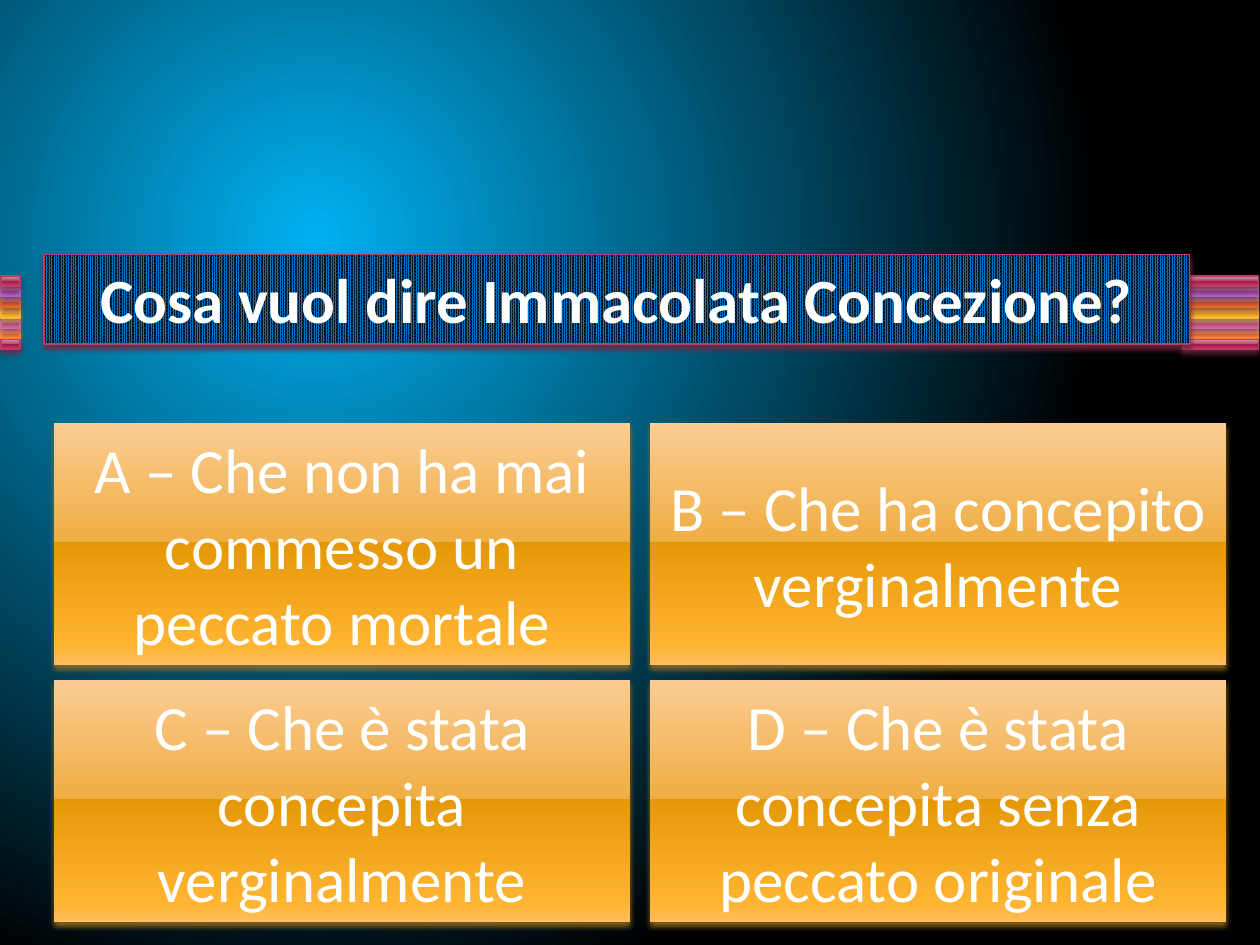
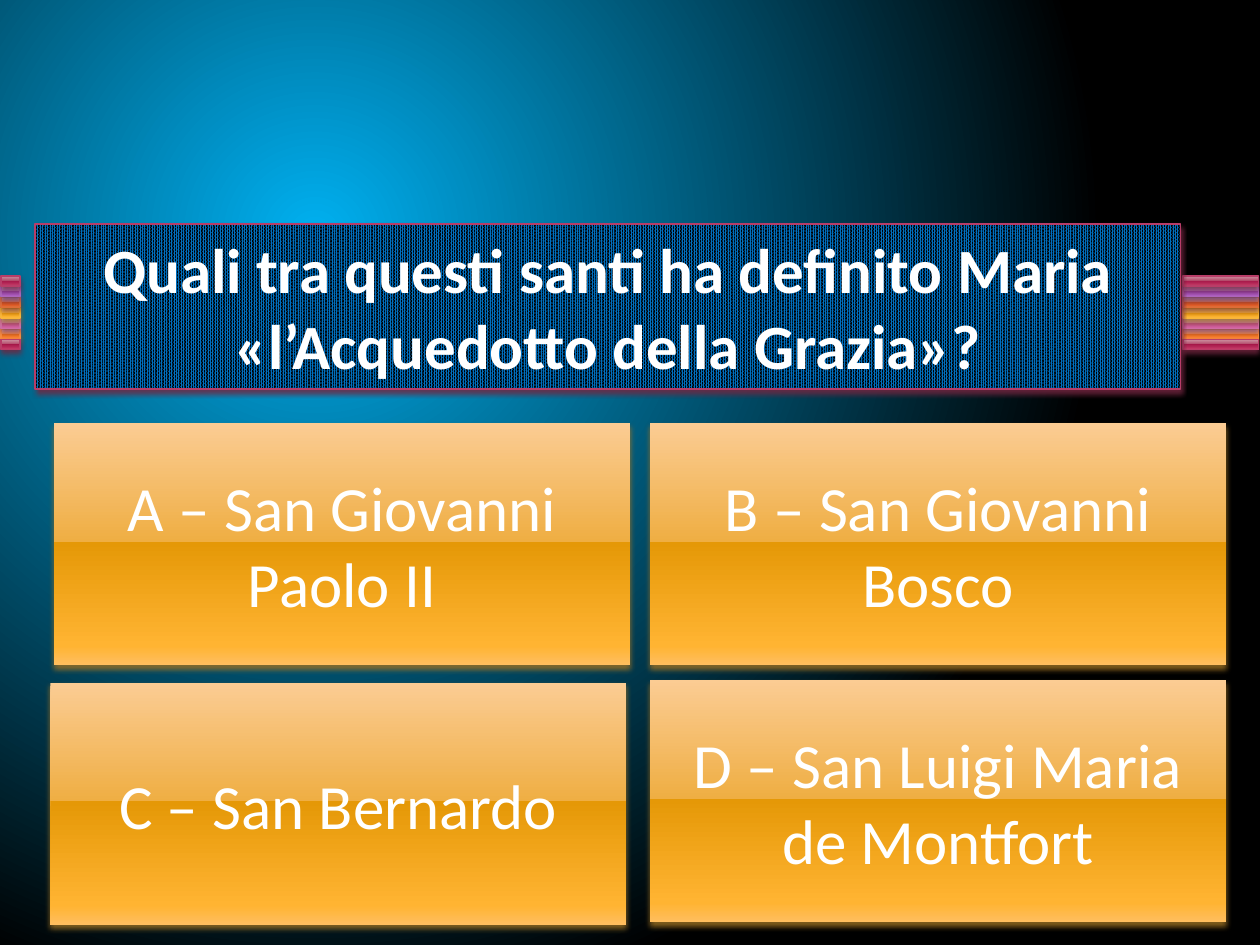
from collections import namedtuple

import pptx
import pptx.dml.color
import pptx.enum.dml
import pptx.enum.shapes
import pptx.enum.text
import pptx.oxml.ns
import pptx.util
from lxml import etree

RGB = pptx.dml.color.RGBColor.from_string
qn = pptx.oxml.ns.qn

WHITE = RGB("FFFFFF")
BLACK = RGB("000000")
SKY = RGB("00B0F0")
BLUE = RGB("0070C0")
FONT = "Calibri"
GLOSS = (0, 49, 49, 92, 100)

Tone = namedtuple("Tone", "gloss line shadow")


def tone(gloss, line, shadow):
    return Tone([RGB(c) for c in gloss.split()], RGB(line), RGB(shadow))


ORANGE = tone("FBB494 F08745 E5670B FF8736 FF9961", "FA8D3D", "9A5726")
PINK = tone("DDA4C1 C66B9D B34181 D361A0 DC79AE", "CF6DA4", "804365")
AMBER = tone("FBCC93 EFAE43 E59807 FFB432 FFBE5F", "F9B639", "9A7023")
RED = tone("E7A493 D66B42 CC4809 E9642C F07B55", "DE6C36", "894321")
PURPLE = tone("C6A2D0 A666B4 8F3EA1 AD5DBF BA76CA", "AC66BB", "6A3F73")
ROSE = tone("CE94A2 B34869 A61749 C13764 CA5D7C", "B83D68", "722640")

# Stripes overlap upwards, and the lowest one lies on top of the others.
STRIPES = ((5, ORANGE), (4, PINK), (3, AMBER), (2, RED), (1, PURPLE), (0, ROSE), (6, ROSE))

# The grid has 100 columns and 75 rows.
COLUMNS, ROWS = 100, 75
STRIPE_TOP, STRIPE_PITCH, STRIPE_HEIGHT = 21.9, 0.84, 0.8
STRIPE_SPANS = ((0.1, 1.5), (93.9, 6))
ANSWER_LEFT, ANSWER_TOP = 4.3, 33.6
ANSWER_WIDTH, ANSWER_HEIGHT = 45.7, 19.2
ANSWER_STEP_X, ANSWER_STEP_Y = 47.3, 20.4
QUESTION_WIDTH = 90.9


def add(parent, tag, **attrs):
    return etree.SubElement(parent, qn(tag), {k: str(v) for k, v in attrs.items()})


def set_stops(grad, stops):
    """Empty a gradient fill and give it (percent, colour) stops."""
    for child in list(grad):
        grad.remove(child)
    gs_list = add(grad, "a:gsLst")
    for pos, colour in stops:
        add(add(gs_list, "a:gs", pos=pos * 1000), "a:srgbClr", val=colour)


class Quiz:
    def __init__(self):
        self.prs = pptx.Presentation()
        self.prs.slide_width = pptx.util.Inches(10)
        self.prs.slide_height = pptx.util.Inches(7.5)
        self.s = None

    def new_slide(self):
        self.s = self.prs.slides.add_slide(self.prs.slide_layouts[6])
        self.background()
        for left, width in STRIPE_SPANS:
            self.stripes(left, width)

    def background(self):
        self.s.background.fill.gradient()
        grad = self.s.element.find(".//" + qn("a:gradFill"))
        set_stops(grad, [(0, SKY), (100, BLACK)])
        add(add(grad, "a:path", path="circle"), "a:fillToRect",
            l=50000, t=50000, r=100000, b=100000)

    def box(self, shapes, left, top, width, height, shadow):
        col = self.prs.slide_width / COLUMNS
        row = self.prs.slide_height / ROWS
        sp = shapes.add_shape(pptx.enum.shapes.MSO_SHAPE.RECTANGLE,
                              round(left * col), round(top * row),
                              round(width * col), round(height * row))
        sp.shadow.inherit = False
        effects = sp.element.spPr.find(qn("a:effectLst"))
        outer = add(effects, "a:outerShdw", blurRad=pptx.util.Pt(3.1),
                    dist=pptx.util.Pt(2), dir=5400000, algn="ctr", rotWithShape=0)
        add(add(outer, "a:srgbClr", val=shadow), "a:alpha", val=83000)
        return sp

    def glossy_box(self, shapes, left, top, width, height, tone):
        sp = self.box(shapes, left, top, width, height, tone.shadow)
        sp.fill.gradient()
        grad = sp.element.spPr.find(qn("a:gradFill"))
        set_stops(grad, zip(GLOSS, tone.gloss))
        add(grad, "a:lin", ang=5400000, scaled=0)
        sp.line.fill.background()
        return sp

    def outline(self, sp, colour):
        sp.line.color.rgb = colour
        sp.line.width = pptx.util.Pt(0.9)

    def stripes(self, left, width):
        group = self.s.shapes.add_group_shape()
        for row, tone in STRIPES:
            top = STRIPE_TOP + row * STRIPE_PITCH
            sp = self.glossy_box(group.shapes, left, top, width, STRIPE_HEIGHT, tone)
            self.outline(sp, tone.line)

    def text(self, sp, words, bold=False):
        p = sp.text_frame.paragraphs[0]
        p.text = words
        p.alignment = pptx.enum.text.PP_ALIGN.CENTER
        p.font.name = FONT
        p.font.size = pptx.util.Pt(36)
        p.font.bold = bold
        p.font.color.rgb = WHITE

    def answers(self, texts, nudges):
        """Fill a two by two grid; nudges maps an index to its (x, y) shift."""
        for i, words in enumerate(texts):
            row, column = divmod(i, 2)
            dx, dy = nudges.get(i, (0, 0))
            sp = self.glossy_box(self.s.shapes,
                                 ANSWER_LEFT + column * ANSWER_STEP_X + dx,
                                 ANSWER_TOP + row * ANSWER_STEP_Y + dy,
                                 ANSWER_WIDTH, ANSWER_HEIGHT, AMBER)
            self.text(sp, words)

    def question(self, words, left, top, height):
        sp = self.box(self.s.shapes, left, top, QUESTION_WIDTH, height, ROSE.shadow)
        sp.fill.patterned()
        sp.fill.pattern = pptx.enum.dml.MSO_PATTERN.PERCENT_90
        sp.fill.fore_color.rgb = BLUE
        sp.fill.back_color.rgb = BLACK
        self.outline(sp, ROSE.line)
        tf = sp.text_frame
        tf.vertical_anchor = pptx.enum.text.MSO_ANCHOR.TOP
        tf.auto_size = pptx.enum.text.MSO_AUTO_SIZE.SHAPE_TO_FIT_TEXT
        self.text(sp, words, bold=True)


def main():
    quiz = Quiz()

    quiz.new_slide()
    quiz.answers(["A – Che non ha mai commesso un peccato mortale",
                  "B – Che ha concepito verginalmente",
                  "C – Che è stata concepita verginalmente",
                  "D – Che è stata concepita senza peccato originale"], {})
    quiz.question("Cosa vuol dire Immacolata Concezione?", 3.5, 20.2, 7.1)

    quiz.new_slide()
    quiz.answers(["A – San Giovanni Paolo II",
                  "B – San Giovanni Bosco",
                  "C – San Bernardo",
                  "D – San Luigi Maria de Montfort"], {2: (-0.3, 0.2)})
    quiz.question("Quali tra questi santi ha definito Maria «l’Acquedotto della Grazia»?",
                  2.8, 17.8, 13.1)

    quiz.prs.save("out.pptx")


if __name__ == "__main__":
    main()
